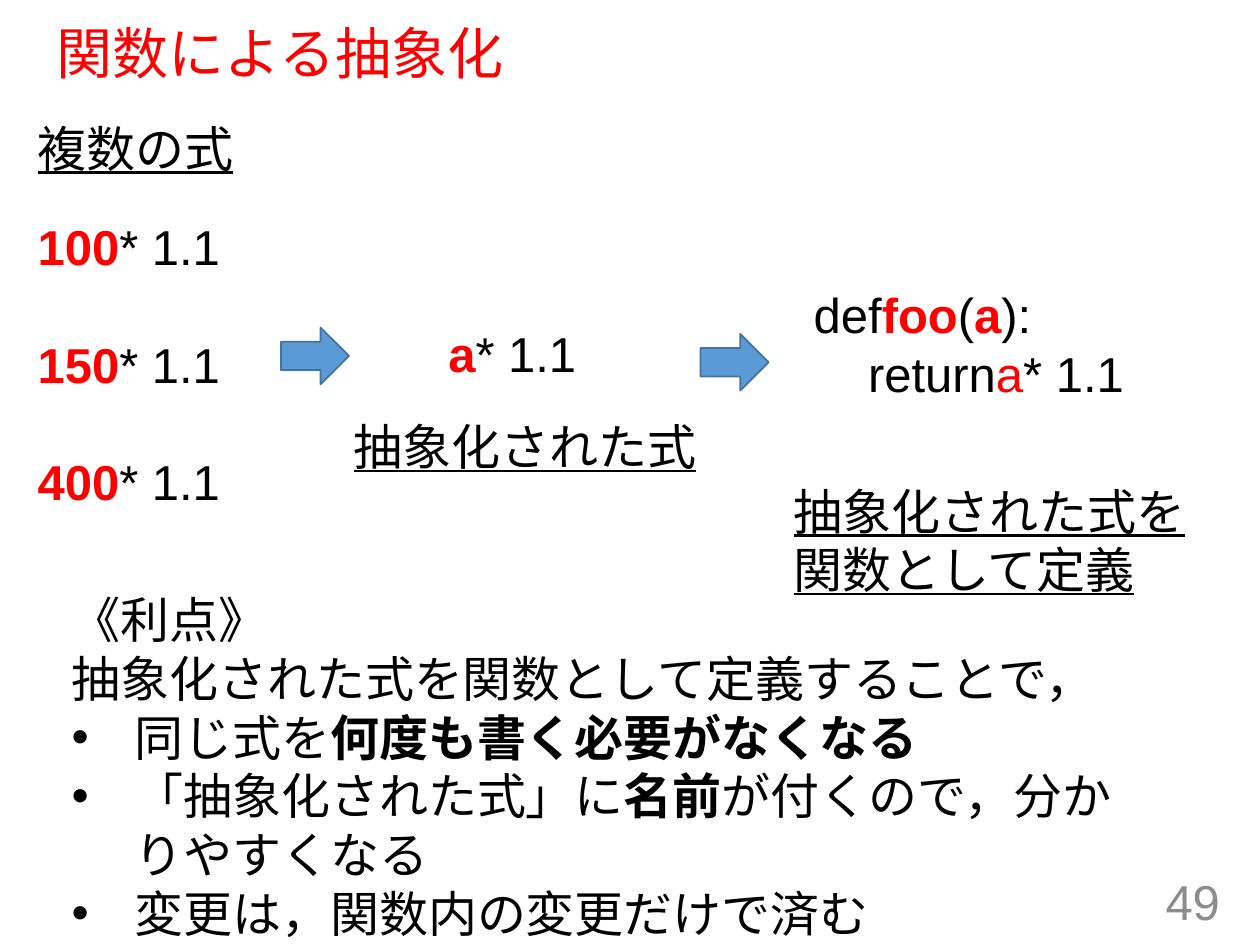
from lxml import etree
from pptx import Presentation
from pptx import util as u
from pptx.dml.color import RGBColor
from pptx.enum import shapes, text
from pptx.oxml.ns import qn

CELL = u.Inches(0.1)  # the slide is a grid of 100 columns by 75 rows
FONT, SIZE, PITCH = "Arial", 28, 33.6
BLACK, RED, GREY = "000000", "FF0000", "8C8C8C"
BLUE, EDGE = "5B9BD5", "43739E"


def color(code):
    return RGBColor.from_string(code)


def grid(*box):
    return [round(n * CELL) for n in box]


def add_run(para, words, tint=BLACK, bold=False, line=False, size=SIZE):
    run = para.add_run()
    run.text = words
    font = run.font
    font.name, font.size = FONT, u.Pt(size)
    font.bold, font.underline = bold, line
    font.color.rgb = color(tint)
    east = etree.SubElement(run._r.get_or_add_rPr(), qn("a:ea"))
    east.set("typeface", FONT)


def add_bullet(para):
    props = para._p.get_or_add_pPr()
    props.set("marL", str(u.Inches(0.5)))
    props.set("indent", str(-u.Inches(0.5)))
    etree.SubElement(props, qn("a:buFont")).set("typeface", FONT)
    etree.SubElement(props, qn("a:buChar")).set("char", "•")


def add_text(slide, box, paras, gap=0, plain=0):
    """Place paragraphs, each a list of run arguments; those after `plain` get bullets if it is set."""
    frame = slide.shapes.add_textbox(*grid(*box)).text_frame
    frame.word_wrap = True
    for i, runs in enumerate(paras):
        para = frame.add_paragraph() if i else frame.paragraphs[0]
        if plain and i >= plain:
            add_bullet(para)
        para.line_spacing = u.Pt(PITCH)
        if i and gap:
            para.space_before = u.Pt(gap)
        for run in runs:
            add_run(para, *run)
    return frame


def add_label(slide, box, words):
    add_text(slide, box, [[(words, BLACK, False, True)]])


def add_title(slide, box, words):
    title = slide.shapes.title
    title.left, title.top, title.width, title.height = grid(*box)
    frame = title.text_frame
    frame.vertical_anchor = text.MSO_ANCHOR.MIDDLE
    para = frame.paragraphs[0]
    para.alignment = text.PP_ALIGN.LEFT
    para.line_spacing = 0.9
    add_run(para, words, RED, size=32)


def add_arrow(slide, left, top):
    arrow = slide.shapes.add_shape(
        shapes.MSO_SHAPE.RIGHT_ARROW, *grid(left, top, 5.4, 4.5))
    arrow.shadow.inherit = False
    arrow.fill.solid()
    arrow.fill.fore_color.rgb = color(BLUE)
    arrow.line.color.rgb = color(EDGE)
    arrow.line.width = u.Pt(1)


def add_sums(slide, left, top):
    add_label(slide, (left, top, 25, 5.7), "複数の式")
    sums = [[(n, RED, True), ("* 1.1",)] for n in ("100", "150", "400")]
    add_text(slide, (left, top + 7.8, 17.8, 29.3), sums, gap=PITCH)


def add_term(slide, left, top):
    add_text(slide, (left + 7.5, top, 13.4, 5.7), [[("a", RED, True), ("* 1.1",)]])
    add_label(slide, (left, top + 7.4, 33.1, 8.2), "抽象化された式")


def add_def(slide, left, top):
    code = [
        [("def",), ("foo", RED, True), ("(",), ("a", RED, True), ("):",)],
        [("    return",), ("a", RED), ("* 1.1",)],
    ]
    add_text(slide, (left + 1.6, top, 29.5, 11.9), code)
    add_label(slide, (left, top + 15.6, 33.5, 10.4), "抽象化された式を関数として定義")


def add_merits(slide, box):
    add_text(slide, box, [
        [("《利点》",)],
        [("抽象化された式を関数として定義することで，",)],
        [("同じ式を",), ("何度も書く必要がなくなる", BLACK, True)],
        [("「抽象化された式」に",), ("名前", BLACK, True),
         ("が付くので，分かりやすくなる",)],
        [("変更は，関数内の変更だけで済む",)],
    ], plain=2)


def add_number(slide, box, words):
    frame = add_text(slide, box, [[(words, GREY)]])
    frame.vertical_anchor = text.MSO_ANCHOR.MIDDLE
    frame.paragraphs[0].alignment = text.PP_ALIGN.RIGHT


def main():
    deck = Presentation()
    deck.slide_width, deck.slide_height = grid(100, 75)
    slide = deck.slides.add_slide(deck.slide_layouts.get_by_name("Title Only"))
    add_title(slide, (3.5, 1.9, 92.5, 5.1), "関数による抽象化")
    add_sums(slide, 2, 8.9)
    add_arrow(slide, 22.3, 26)
    add_term(slide, 27.1, 25.2)
    add_arrow(slide, 55.6, 26.5)
    add_def(slide, 62, 22.1)
    add_merits(slide, (4.7, 46.3, 86.4, 24.1))
    add_number(slide, (75.3, 69.5, 22.5, 4), "49")
    deck.save("out.pptx")


if __name__ == "__main__":
    main()
